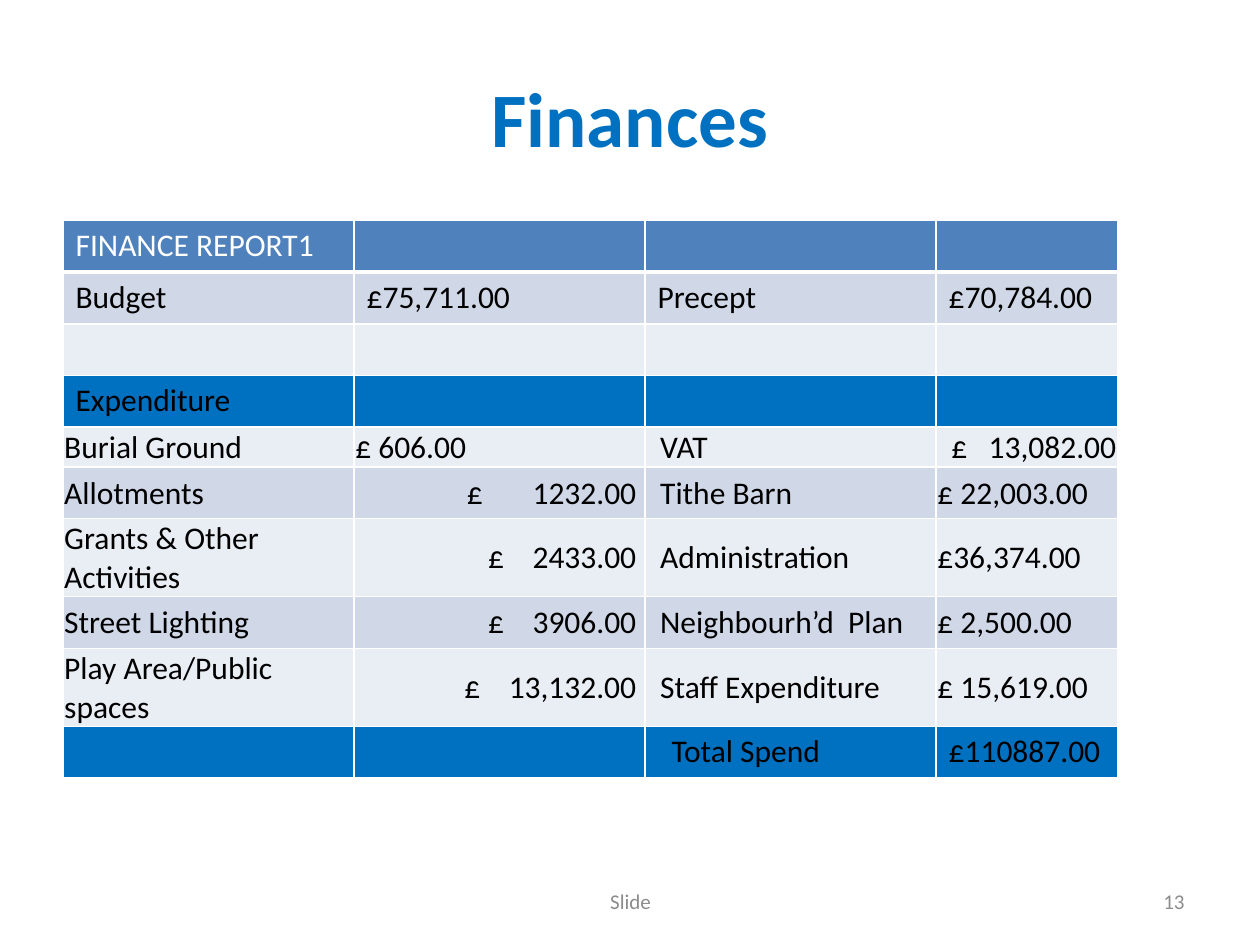
import pptx
import pptx.util
import pptx.dml.color
import pptx.enum.text
import pptx.oxml
import pptx.oxml.ns

Inches = pptx.util.Inches
Pt = pptx.util.Pt
RGBColor = pptx.dml.color.RGBColor
ALIGN = pptx.enum.text.PP_ALIGN
MIDDLE = pptx.enum.text.MSO_ANCHOR.MIDDLE

FONT = "Calibri"
BLUE = RGBColor(0x00, 0x70, 0xC0)
HEADER_BLUE = RGBColor(0x4F, 0x81, 0xBD)
DARK_BAND = RGBColor(0xD0, 0xD8, 0xE8)
LIGHT_BAND = RGBColor(0xE9, 0xED, 0xF4)
WHITE = RGBColor(0xFF, 0xFF, 0xFF)
BLACK = RGBColor(0x00, 0x00, 0x00)
GREY = RGBColor(0x8C, 0x8C, 0x8C)

COLUMN_WIDTHS = [2.31, 2.31, 2.31, 1.44]
ROW_HEIGHT = 0.41
FIRST_ITEM_HEIGHT = 0.14
FIRST_ITEM_ROW = 4
TOTAL_ROW = 9
BAND_ROWS = {0: HEADER_BLUE, 3: BLUE, TOTAL_ROW: BLUE}
SPACE_POINTS = 4.07
EXTRA_SPACES = {(4, 3): 2, (5, 1): 6, (6, 1): 3, (7, 1): 3, (8, 1): 3}

REPORT = [
    ["FINANCE REPORT1", "", "", ""],
    ["Budget", "£75,711.00", "Precept", "£70,784.00"],
    ["", "", "", ""],
    ["Expenditure", "", "", ""],
    ["Burial Ground", "£ 606.00", "VAT", "£ 13,082.00"],
    ["Allotments", "£ 1232.00", "Tithe Barn", "£ 22,003.00"],
    ["Grants & Other Activities", "£ 2433.00", "Administration", "£36,374.00"],
    ["Street Lighting", "£ 3906.00", "Neighbourh’d  Plan", "£ 2,500.00"],
    ["Play Area/Public spaces", "£ 13,132.00", "Staff Expenditure", "£ 15,619.00"],
    ["", "", "Total Spend", "£110887.00"],
]


def style_paragraph(para, size, color, align, bold=False):
    para.alignment = align
    para.font.name = FONT
    para.font.size = Pt(size)
    para.font.bold = bold
    para.font.color.rgb = color


def add_title(page, text):
    title = page.shapes.title
    title.left, title.top = Inches(0.5), Inches(0.3)
    title.width, title.height = Inches(9), Inches(1.25)
    title.text_frame.text = text
    title.text_frame.vertical_anchor = MIDDLE
    style_paragraph(title.text_frame.paragraphs[0], 44, BLUE, ALIGN.CENTER, True)


def add_footer(page, left, width, text, align):
    box = page.shapes.add_textbox(Inches(left), Inches(6.95), Inches(width), Inches(0.4))
    frame = box.text_frame
    frame.word_wrap = True
    frame.vertical_anchor = MIDDLE
    frame.text = text
    style_paragraph(frame.paragraphs[0], 12, GREY, align)


def set_borders(cell, row):
    widths = {"L": 1, "R": 1, "T": 3 if row == 1 else 1, "B": 3 if row == 0 else 1}
    properties = cell._tc.get_or_add_tcPr()
    for side, width in widths.items():
        properties.append(pptx.oxml.parse_xml(
            f'<a:ln{side} {pptx.oxml.ns.nsdecls("a")} w="{Pt(width)}">'
            f'<a:solidFill><a:srgbClr val="{WHITE}"/></a:solidFill></a:ln{side}>'))


def set_margins(cell, row, column):
    if FIRST_ITEM_ROW <= row < TOTAL_ROW:
        cell.vertical_anchor = MIDDLE
        cell.margin_left = Inches(0.12 if column == 2 else 0.01)
        cell.margin_right = Inches(0.07 if column == 1 and row > FIRST_ITEM_ROW else 0.01)
        cell.margin_top, cell.margin_bottom = Inches(0.01), 0
    elif row == TOTAL_ROW and column == 2:
        cell.margin_left = Inches(0.21)


def write_amount(para, text, extra_spaces):
    sign = para.add_run()
    sign.text = text[0]
    sign.font._element.set("spc", str(round(extra_spaces * SPACE_POINTS * 100)))
    para.add_run().text = text[1:]


def fill_cell(cell, row, column, text):
    set_borders(cell, row)
    set_margins(cell, row, column)
    cell.fill.solid()
    cell.fill.fore_color.rgb = BAND_ROWS.get(row, DARK_BAND if row % 2 else LIGHT_BAND)
    para = cell.text_frame.paragraphs[0]
    extra_spaces = EXTRA_SPACES.get((row, column))
    if extra_spaces:
        write_amount(para, text, extra_spaces)
    else:
        cell.text_frame.text = text
    is_amount = column % 2 == 1
    style_paragraph(para, 18, WHITE if row in BAND_ROWS else BLACK,
                    ALIGN.RIGHT if is_amount else ALIGN.LEFT,
                    not is_amount or row in BAND_ROWS)


def add_report(page):
    heights = [FIRST_ITEM_HEIGHT if row == FIRST_ITEM_ROW else ROW_HEIGHT
               for row in range(len(REPORT))]
    table = page.shapes.add_table(
        len(REPORT), len(COLUMN_WIDTHS), Inches(0.5), Inches(1.75),
        Inches(sum(COLUMN_WIDTHS)), Inches(sum(heights))).table
    for column, width in zip(table.columns, COLUMN_WIDTHS):
        column.width = Inches(width)
    for row, height in zip(table.rows, heights):
        row.height = Inches(height)
    for row, texts in enumerate(REPORT):
        for column, text in enumerate(texts):
            fill_cell(table.cell(row, column), row, column, text)


def main():
    deck = pptx.Presentation()
    deck.slide_width, deck.slide_height = Inches(10), Inches(7.5)
    page = deck.slides.add_slide(deck.slide_layouts[5])
    add_title(page, "Finances")
    add_report(page)
    add_footer(page, 3.42, 3.17, "Slide", ALIGN.CENTER)
    add_footer(page, 7.17, 2.33, "13", ALIGN.RIGHT)
    deck.save("out.pptx")


if __name__ == "__main__":
    main()
